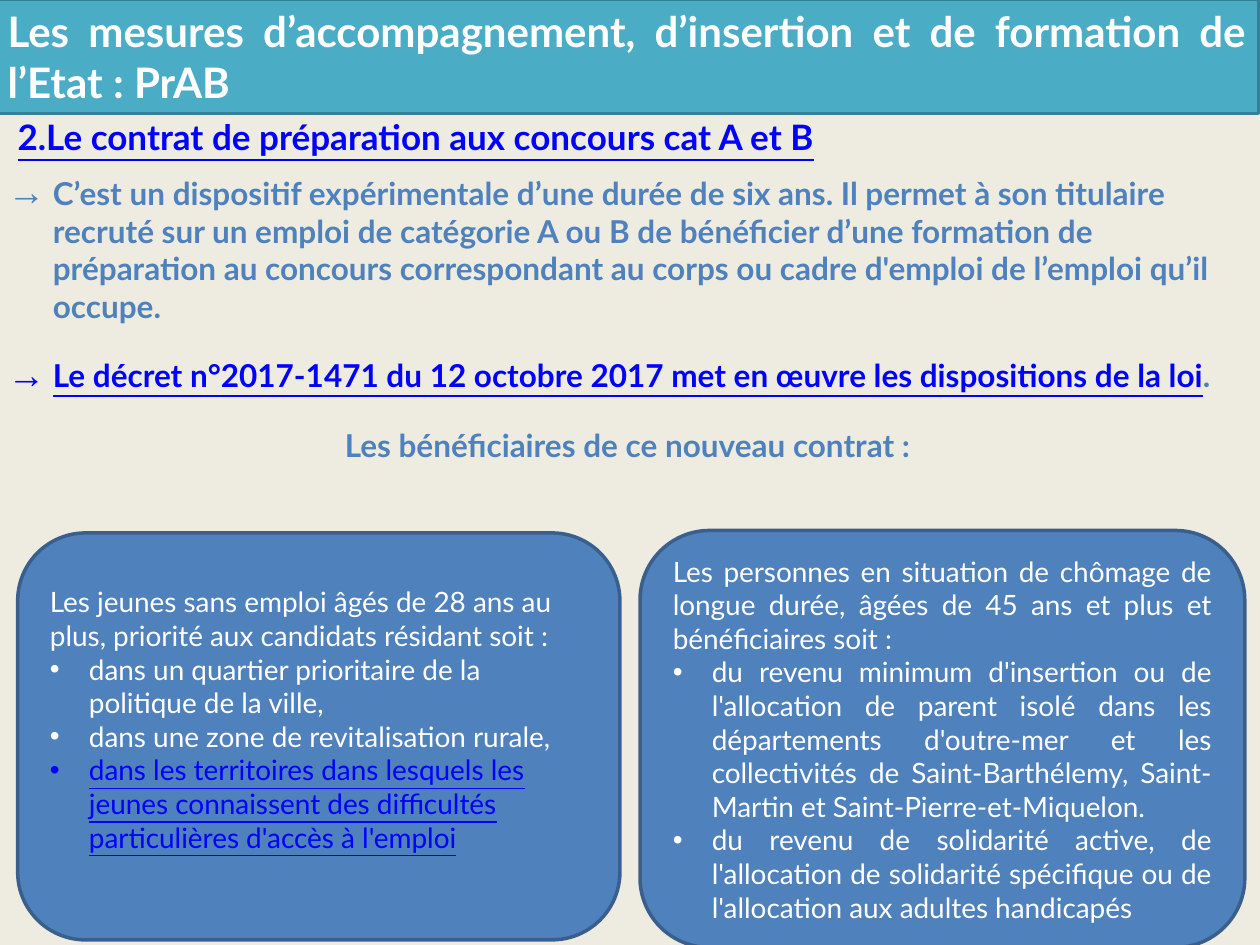
from lxml import etree
from pptx import Presentation, util as u
from pptx.dml.color import RGBColor
from pptx.enum import shapes as s, text as t
from pptx.oxml.ns import qn

HUE = {"back": "EEECE1", "bar": "4BACC6", "edge": "377F92", "card": "4F81BD",
       "rim": "3A5F8C", "link": "0000FF", "white": "FFFFFF"}
LEFT, MID, JUST = t.PP_ALIGN.LEFT, t.PP_ALIGN.CENTER, t.PP_ALIGN.JUSTIFY

TITLE = "Les mesures d’accompagnement, d’insertion et de formation de l’Etat : PrAB"
HEAD = "2.Le contrat de préparation aux concours cat A et B"
POINT = ("C’est un dispositif expérimentale d’une durée de six ans. Il permet à son "
         "titulaire recruté sur un emploi de catégorie A ou B de bénéficier d’une "
         "formation de préparation au concours correspondant au corps ou cadre "
         "d'emploi de l’emploi qu’il occupe.")
LAW = "Le décret n°2017-1471 du 12 octobre 2017 met en œuvre les dispositions de la loi"
WHO = "Les bénéficiaires de ce nouveau contrat :"

# box, alignment, bottom inset, lead, items as (text, colour)
CARDS = [
    ((0.14, 4.23, 4.78, 3.23), LEFT, 0.32,
     "Les jeunes sans emploi âgés de 28 ans au plus, priorité aux candidats "
     "résidant soit :",
     [("dans un quartier prioritaire de la politique de la ville,", "white"),
      ("dans une zone de revitalisation rurale,", "white"),
      ("dans les territoires dans lesquels les jeunes connaissent des difficultés "
       "particulières d'accès à l'emploi", "link")]),
    ((5.08, 4.21, 4.8, 3.31), JUST, 0.05,
     "Les personnes en situation de chômage de longue durée, âgées de 45 ans et "
     "plus et bénéficiaires soit :",
     [("du revenu minimum d'insertion ou de l'allocation de parent isolé dans les "
       "départements d'outre-mer et les collectivités de Saint-Barthélemy, "
       "Saint-Martin et Saint-Pierre-et-Miquelon.", "white"),
      ("du revenu de solidarité active, de l'allocation de solidarité spécifique ou "
       "de l'allocation aux adultes handicapés", "white")]),
]


def rgb(name):
    return RGBColor.from_string(HUE[name])


def place(shape, box):
    shape.left, shape.top, shape.width, shape.height = map(u.Inches, box)


def paint(shape, fill, line):
    shape.fill.solid()
    shape.fill.fore_color.rgb = rgb(fill)
    shape.line.color.rgb = rgb(line)
    shape.line.width = u.Pt(2)


def write(frame, words, size, hue, align=LEFT, bold=False, mark=None,
          size_pct=100, left=0, hang=0, gap=0):
    """Add a paragraph, filling the first one while it is empty."""
    para = frame.paragraphs[-1]
    if para.runs:
        para = frame.add_paragraph()
    para.add_run().text = words
    para.alignment = align
    para.space_before = para.space_after = u.Pt(gap)
    props = para._p.get_or_add_pPr()
    props.set("marL", str(u.Inches(left)))
    props.set("indent", str(u.Inches(-hang)))
    if mark:
        tint = etree.SubElement(props, qn("a:buClr"))
        etree.SubElement(tint, qn("a:srgbClr"), val=HUE[hue])
        etree.SubElement(props, qn("a:buSzPct"), val=str(size_pct * 1000))
        etree.SubElement(props, qn("a:buFont"), typeface="Arial")
        etree.SubElement(props, qn("a:buChar"), char=mark)
    else:
        etree.SubElement(props, qn("a:buNone"))
    font = para.font
    font.name, font.size, font.bold = "Lato", u.Pt(size), bold
    font.underline = hue == "link"
    font.color.rgb = rgb(hue)
    return para


def main():
    deck = Presentation()
    deck.slide_width, deck.slide_height = u.Inches(10), u.Inches(7.5)
    slide = deck.slides.add_slide(deck.slide_layouts[1])
    slide.background.fill.solid()
    slide.background.fill.fore_color.rgb = rgb("back")

    title, body = slide.placeholders
    place(title, (-0.04, -0.01, 10.03, 0.91))
    paint(title, "bar", "edge")
    place(body, (-0.04, 0.87, 10.04, 6.47))
    for holder, anchor in ((title, t.MSO_ANCHOR.MIDDLE), (body, t.MSO_ANCHOR.TOP)):
        holder.text_frame.auto_size = t.MSO_AUTO_SIZE.NONE
        holder.text_frame.vertical_anchor = anchor
    write(title.text_frame, TITLE, 24, "white", JUST, True)

    frame = body.text_frame
    arrow = dict(bold=True, mark="→", size_pct=120, left=0.36, hang=0.36, gap=9)
    write(frame, HEAD, 20, "link", JUST, True, left=0.08)
    write(frame, POINT, 18, "card", **arrow)
    stop = write(frame, LAW, 18, "link", **arrow).add_run()
    stop.text = "."
    stop.font.underline = False
    stop.font.color.rgb = rgb("card")
    write(frame, WHO, 18, "card", MID, True, gap=9)

    for box, align, inset, lead, items in CARDS:
        card = slide.shapes.add_shape(s.MSO_SHAPE.ROUNDED_RECTANGLE,
                                      *map(u.Inches, box))
        card.shadow.inherit = False
        paint(card, "card", "rim")
        frame = card.text_frame
        frame.word_wrap = True
        frame.vertical_anchor = t.MSO_ANCHOR.MIDDLE
        frame.margin_bottom = u.Inches(inset)
        write(frame, lead, 16, "white", align)
        for words, hue in items:
            write(frame, words, 16, hue, align, mark="•", left=0.31, hang=0.31)

    deck.save("out.pptx")


if __name__ == "__main__":
    main()
